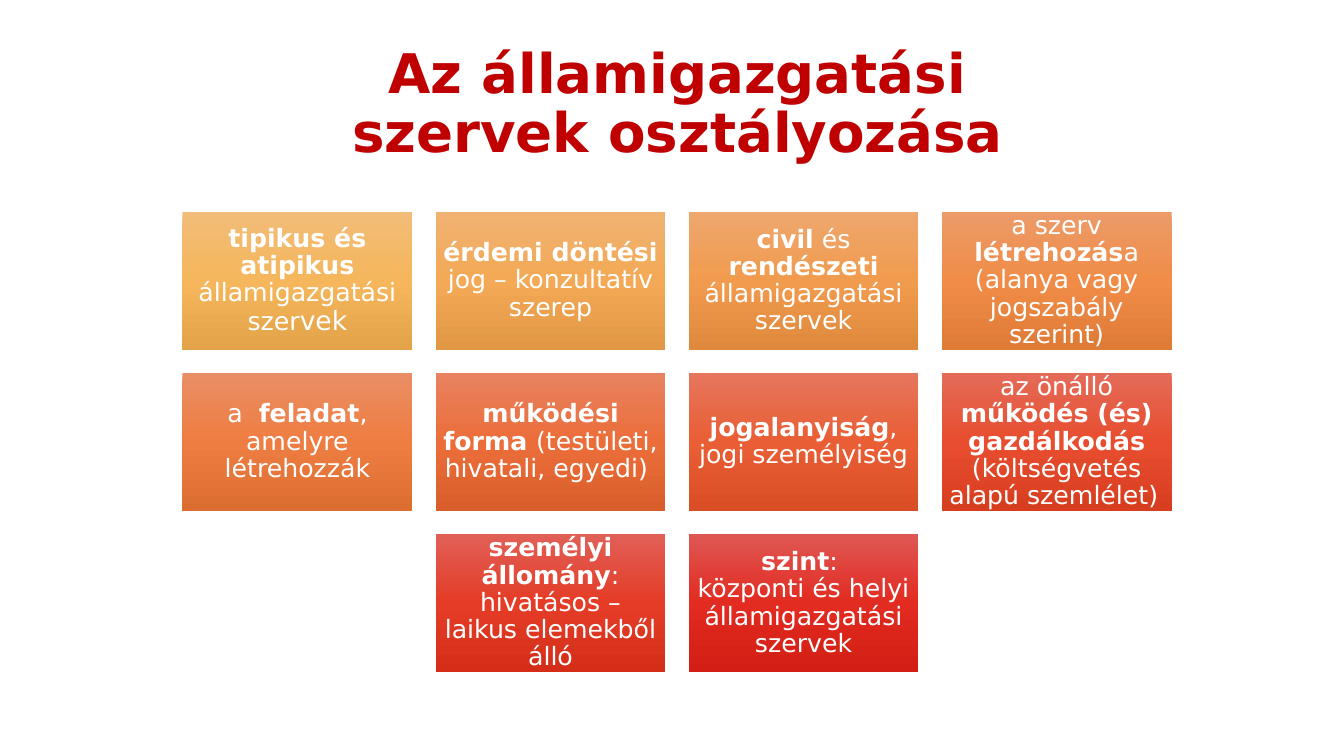
from dataclasses import dataclass

from lxml import etree
from pptx import Presentation
from pptx.dml.color import RGBColor
from pptx.enum.shapes import MSO_SHAPE
from pptx.enum.text import MSO_ANCHOR, MSO_AUTO_SIZE, PP_ALIGN
from pptx.oxml.ns import qn
from pptx.slide import Slide
from pptx.util import Inches, Pt

RECTANGLE = MSO_SHAPE.RECTANGLE
MIDDLE = MSO_ANCHOR.MIDDLE
NO_AUTOFIT = MSO_AUTO_SIZE.NONE
CENTER = PP_ALIGN.CENTER

BODY_FONT = "DejaVu Sans"
WHITE = "FFFFFF"
TITLE_RED = "C00000"
TITLE_LINES = ("Az államigazgatási", "szervek osztályozása")

CARD_WIDTH, CARD_HEIGHT = 2.28, 1.37
COLUMN_STEP, ROW_STEP = 2.51, 1.6
GRID_CENTER, GRID_TOP = 6.715, 2.1
COLUMNS = 4
CARD_INSET = 0.07


@dataclass(frozen=True)
class Phrase:
    text: str
    bold: bool = False
    size: int = 18
    font: str = BODY_FONT


@dataclass(frozen=True)
class Card:
    gradient: tuple[str, str, str]
    paragraphs: tuple[tuple[Phrase, ...], ...]


CARDS = (
    Card(("F2BD78", "F5B65C", "E2A349"), ((
        Phrase("tipikus és atipikus ", True),
        Phrase("államigazgatási szer"), Phrase("vek", size=19)),)),
    Card(("F0B273", "F3A955", "E19743"), ((
        Phrase("érdemi döntési ", True), Phrase("jog – konzultatív szerep")),)),
    Card(("EEA76E", "F19B4E", "DF893D"), ((
        Phrase("civil", True), Phrase(" és "), Phrase("rendészeti", True),
        Phrase(" államigazgatási szervek")),)),
    Card(("EC9B69", "F08C47", "DE7B37"), ((
        Phrase("a szerv "), Phrase("létrehozás", True),
        Phrase("a (alanya vagy jogszabály szerint)")),)),
    Card(("EA8E65", "EE7D41", "DC6D31"), ((
        Phrase("a  "), Phrase("feladat", True), Phrase(", amelyre létrehozzák")),)),
    Card(("E88260", "EB6E3A", "DA5E2B"), ((
        Phrase("működési forma ", True), Phrase("(testületi, hivatali, egyedi) ")),)),
    Card(("E6765D", "E95E34", "D94E25"), ((
        Phrase("jogalanyiság", True), Phrase(", jogi személyiség")),)),
    Card(("E46B59", "E74D2E", "D73E1F"), ((
        Phrase("az önálló "), Phrase("működés (és) gazdálkodás ", True),
        Phrase("(költségvetés alapú szemlélet)"),
        Phrase(" ", size=16, font="Times New Roman")),)),
    Card(("E16056", "E43C27", "D42E19"), ((
        Phrase("személyi állomány", True),
        Phrase(": hivatásos – laikus elemekből álló")),)),
    Card(("DF5753", "E22B21", "D21E14"), (
        (Phrase("szint", True), Phrase(": ")),
        (Phrase("központi és helyi államigazgatási szervek"),))),
)


def color(hex_value: str) -> RGBColor:
    return RGBColor.from_string(hex_value)


def add_phrase(paragraph, phrase: Phrase, hex_value: str) -> None:
    run = paragraph.add_run()
    run.text = phrase.text
    run.font.name = phrase.font
    run.font.size = Pt(phrase.size)
    run.font.bold = phrase.bold
    run.font.color.rgb = color(hex_value)


def format_paragraph(paragraph) -> None:
    paragraph.alignment = CENTER
    paragraph.line_spacing = 0.9
    paragraph.space_before = Pt(0)


def fill_downward(shape, stops: tuple[str, str, str]) -> None:
    shape.fill.gradient()
    gradient = shape._element.spPr.find(qn("a:gradFill"))
    for child in list(gradient):
        gradient.remove(child)
    stop_list = etree.SubElement(gradient, qn("a:gsLst"))
    for position, hex_value in zip((0, 50000, 100000), stops):
        stop = etree.SubElement(stop_list, qn("a:gs"), pos=str(position))
        etree.SubElement(stop, qn("a:srgbClr"), val=hex_value)
    etree.SubElement(gradient, qn("a:lin"), ang="5400000", scaled="0")


def add_title(slide: Slide) -> None:
    title = slide.shapes.title
    title.left, title.top = Inches(1.72), Inches(0.31)
    title.width, title.height = Inches(10), Inches(1.47)
    frame = title.text_frame
    frame.word_wrap = True
    frame.auto_size = NO_AUTOFIT
    frame.vertical_anchor = MIDDLE
    paragraph = frame.paragraphs[0]
    format_paragraph(paragraph)
    for index, line in enumerate(TITLE_LINES):
        if index:
            paragraph.add_line_break()
        add_phrase(paragraph, Phrase(line, True, 39), TITLE_RED)


def add_card(slide: Slide, card: Card, left: float, top: float) -> None:
    shape = slide.shapes.add_shape(
        RECTANGLE, Inches(left), Inches(top), Inches(CARD_WIDTH), Inches(CARD_HEIGHT))
    shape.shadow.inherit = False
    shape.line.fill.background()
    fill_downward(shape, card.gradient)
    frame = shape.text_frame
    frame.word_wrap = True
    frame.vertical_anchor = MIDDLE
    frame.margin_left = frame.margin_right = Inches(CARD_INSET)
    frame.margin_top = frame.margin_bottom = Inches(CARD_INSET)
    for index, phrases in enumerate(card.paragraphs):
        paragraph = frame.add_paragraph() if index else frame.paragraphs[0]
        format_paragraph(paragraph)
        for phrase in phrases:
            add_phrase(paragraph, phrase, WHITE)


def add_card_grid(slide: Slide) -> None:
    for row, start in enumerate(range(0, len(CARDS), COLUMNS)):
        row_cards = CARDS[start:start + COLUMNS]
        row_width = (len(row_cards) - 1) * COLUMN_STEP + CARD_WIDTH
        row_left = GRID_CENTER - row_width / 2
        for column, card in enumerate(row_cards):
            add_card(slide, card, row_left + column * COLUMN_STEP,
                     GRID_TOP + row * ROW_STEP)


def main() -> None:
    presentation = Presentation()
    presentation.slide_width = Inches(13.33)
    presentation.slide_height = Inches(7.5)
    slide = presentation.slides.add_slide(presentation.slide_layouts[5])
    add_title(slide)
    add_card_grid(slide)
    presentation.save("out.pptx")


if __name__ == "__main__":
    main()
